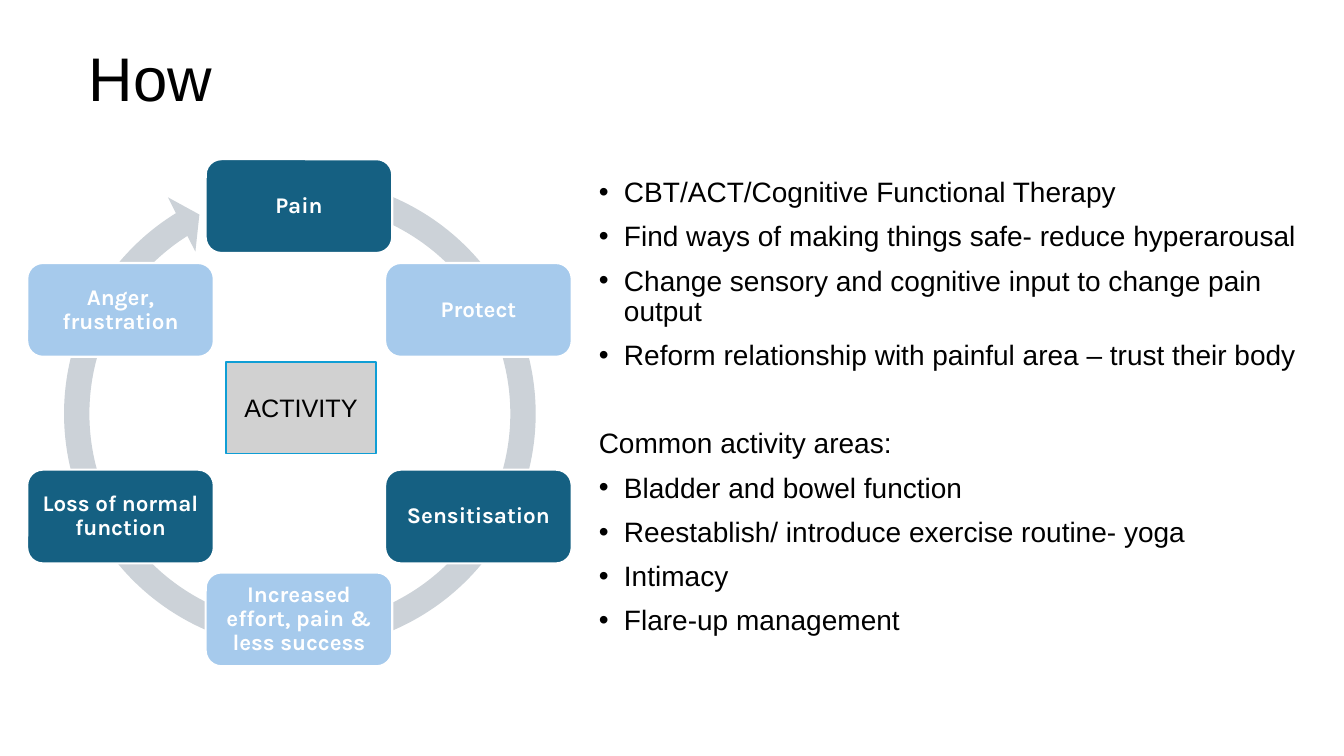
"""Build the "How" slide: an activity cycle beside a list of approaches."""
from dataclasses import dataclass
from math import cos, radians, sin

from lxml.etree import SubElement
from pptx import Presentation
from pptx.dml.color import RGBColor
from pptx.enum.shapes import MSO_SHAPE as SHAPE
from pptx.enum.text import MSO_ANCHOR as ANCHOR, PP_ALIGN as ALIGN
from pptx.oxml.ns import qn
from pptx.util import Emu, Pt

PX = 9144
DARK, LIGHT, WHITE, BLACK = "156082", "A6CAEC", "FFFFFF", "000000"
CENTRE_X, CENTRE_Y, RADIUS = 297, 410, 205
NODE_W, NODE_H = 185, 93
RING = 503
RING_ADJUSTMENTS = (0.05, 3.13, 142.81, 170.96, 0.06)


@dataclass
class Box:
    left: int
    top: int
    width: int
    height: int


@dataclass
class Style:
    size: int
    font: str = "Arial"
    color: str = BLACK
    bold: bool = False
    align: ALIGN = ALIGN.LEFT
    spacing: float = 0.9


@dataclass
class Line:
    text: str
    bullet: bool = True
    before: float = 10


TITLE = Style(44)
BODY = Style(20)
NODE = Style(16, "Karla", WHITE, True, ALIGN.CENTER)
ACTIVITY = Style(18, align=ALIGN.CENTER, spacing=1.0)

STAGES = (
    "Pain",
    "Protect",
    "Sensitisation",
    "Increased effort, pain & less success",
    "Loss of normal function",
    "Anger, frustration",
)
STAGE_FILLS = (DARK, LIGHT, DARK, LIGHT, DARK, LIGHT)
APPROACHES = (
    Line("CBT/ACT/Cognitive Functional Therapy"),
    Line("Find ways of making things safe- reduce hyperarousal"),
    Line("Change sensory and cognitive input to change pain output"),
    Line("Reform relationship with painful area – trust their body"),
    Line("Common activity areas:", bullet=False, before=41.5),
    Line("Bladder and bowel function"),
    Line("Reestablish/ introduce exercise routine- yoga"),
    Line("Intimacy"),
    Line("Flare-up management"),
)


def px(n: int) -> Emu:
    """Convert px to EMU."""
    return Emu(n * PX)


def rgb(value: str) -> RGBColor:
    """Turn a hex string into a colour."""
    return RGBColor.from_string(value)


def place(box: Box) -> tuple[Emu, ...]:
    """Give the position and size of a box in EMU."""
    return tuple(px(n) for n in (box.left, box.top, box.width, box.height))


def write(s, lines: tuple[Line, ...], style: Style, anchor: ANCHOR, inset: int | None = None) -> None:
    """Fill a shape with styled paragraphs."""
    tf = s.text_frame
    tf.word_wrap = True
    tf.vertical_anchor = anchor
    if inset is not None:
        for side in ("left", "top", "right", "bottom"):
            setattr(tf, f"margin_{side}", px(inset))
    for i, line in enumerate(lines):
        p = tf.add_paragraph() if i else tf.paragraphs[0]
        layout = {"alignment": style.align, "line_spacing": style.spacing, "space_before": Pt(line.before)}
        for name, value in layout.items():
            setattr(p, name, value)
        if line.bullet:
            pPr = p._p.get_or_add_pPr()
            pPr.set("marL", str(px(25)))
            pPr.set("indent", str(px(-25)))
            SubElement(pPr, qn("a:buFont")).set("typeface", "Arial")
            SubElement(pPr, qn("a:buChar")).set("char", "•")
        r = p.add_run()
        r.text = line.text
        for name, value in {"name": style.font, "size": Pt(style.size), "bold": style.bold}.items():
            setattr(r.font, name, value)
        r.font.color.rgb = rgb(style.color)


def add_text(slide, box: Box, lines: tuple[Line, ...], style: Style, anchor: ANCHOR) -> None:
    """Add a text box."""
    write(slide.shapes.add_textbox(*place(box)), lines, style, anchor)


def add_shape(slide, kind: SHAPE, box: Box, fill: str, line: str | None = None, width: float = 1):
    """Add a flat filled shape, outlined if a line colour is given."""
    s = slide.shapes.add_shape(kind, *place(box))
    s.shadow.inherit = False
    s.fill.solid()
    s.fill.fore_color.rgb = rgb(fill)
    if line:
        s.line.color.rgb = rgb(line)
        s.line.width = Pt(width)
    else:
        s.line.fill.background()
    return s


def add_cycle(slide) -> None:
    """Draw the ring arrow and its evenly spaced stages, clockwise from the top."""
    ring_box = Box(CENTRE_X - RING // 2, CENTRE_Y - RING // 2, RING, RING)
    ring = add_shape(slide, SHAPE.CIRCULAR_ARROW, ring_box, "CCD2D8")
    for i, value in enumerate(RING_ADJUSTMENTS):
        ring.adjustments[i] = value
    for i, (stage, fill) in enumerate(zip(STAGES, STAGE_FILLS)):
        angle = radians(360 / len(STAGES) * i)
        left = round(CENTRE_X + RADIUS * sin(angle) - NODE_W / 2)
        top = round(CENTRE_Y - RADIUS * cos(angle) - NODE_H / 2)
        s = add_shape(slide, SHAPE.ROUNDED_RECTANGLE, Box(left, top, NODE_W, NODE_H), fill, WHITE, 1.5)
        write(s, (Line(stage, False, 0),), NODE, ANCHOR.MIDDLE, 7)


def main() -> None:
    """Build and save the slide."""
    prs = Presentation()
    prs.slide_width, prs.slide_height = px(1333), px(750)
    slide = prs.slides.add_slide(prs.slide_layouts[6])
    add_text(slide, Box(78, 40, 1150, 81), (Line("How", False, 0),), TITLE, ANCHOR.MIDDLE)
    add_text(slide, Box(584, 172, 749, 476), APPROACHES, BODY, ANCHOR.TOP)
    add_cycle(slide)
    s = add_shape(slide, SHAPE.RECTANGLE, Box(224, 359, 149, 91), "D1D1D1", "0F9ED5")
    write(s, (Line("ACTIVITY", False, 0),), ACTIVITY, ANCHOR.MIDDLE)
    prs.save("out.pptx")


if __name__ == "__main__":
    main()
